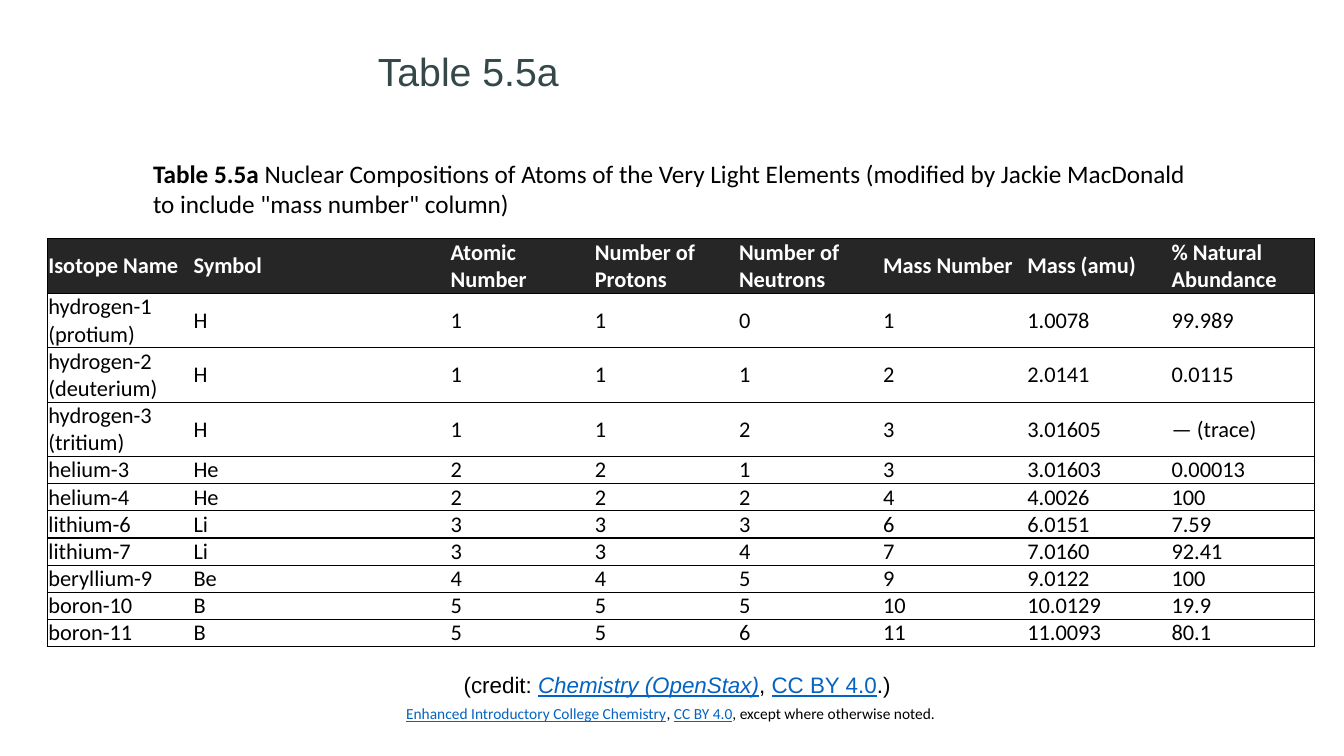
import pptx
import pptx.dml.color
import pptx.enum.text
import pptx.oxml.ns
import pptx.util
from lxml import etree

Inches = pptx.util.Inches
Pt = pptx.util.Pt
RGBColor = pptx.dml.color.RGBColor
ANCHOR = pptx.enum.text.MSO_ANCHOR

BLACK = RGBColor(0x00, 0x00, 0x00)
WHITE = RGBColor(0xFF, 0xFF, 0xFF)
HEADER = RGBColor(0x26, 0x26, 0x26)
TITLE = RGBColor(0x35, 0x48, 0x49)
LINK = RGBColor(0x05, 0x63, 0xC1)

COLUMN_WIDTHS = [1.44, 2.55] + [1.43] * 6
TALL_ROW, SHORT_ROW = 0.54, 0.27
TALL_ROWS = 4  # the header and the three hydrogen isotopes wrap

ISOTOPES = [
    ("Isotope Name", "Symbol", "Atomic Number", "Number of Protons",
     "Number of Neutrons", "Mass Number", "Mass (amu)", "% Natural Abundance"),
    ("hydrogen-1 (protium)", "H", "1", "1", "0", "1", "1.0078", "99.989"),
    ("hydrogen-2 (deuterium)", "H", "1", "1", "1", "2", "2.0141", "0.0115"),
    ("hydrogen-3 (tritium)", "H", "1", "1", "2", "3", "3.01605", "— (trace)"),
    ("helium-3", "He", "2", "2", "1", "3", "3.01603", "0.00013"),
    ("helium-4", "He", "2", "2", "2", "4", "4.0026", "100"),
    ("lithium-6", "Li", "3", "3", "3", "6", "6.0151", "7.59"),
    ("lithium-7", "Li", "3", "3", "4", "7", "7.0160", "92.41"),
    ("beryllium-9", "Be", "4", "4", "5", "9", "9.0122", "100"),
    ("boron-10", "B", "5", "5", "5", "10", "10.0129", "19.9"),
    ("boron-11", "B", "5", "5", "6", "11", "11.0093", "80.1"),
]


def add_span(para, text, size=16, font="Calibri", color=BLACK,
             bold=False, italic=False, underline=False):
    span = para.add_run()
    span.text = text
    span.font.size = Pt(size)
    span.font.name = font
    span.font.color.rgb = color
    span.font.bold = bold
    span.font.italic = italic
    span.font.underline = underline


def add_text(page, left, top, width, height, spans, wrap=True,
             anchor=ANCHOR.TOP, line_spacing=None, **style):
    """Place one paragraph; spans are (text, format) pairs sharing a style."""
    box = page.shapes.add_textbox(
        Inches(left), Inches(top), Inches(width), Inches(height))
    frame = box.text_frame
    frame.word_wrap = wrap
    frame.vertical_anchor = anchor
    para = frame.paragraphs[0]
    para.line_spacing = line_spacing
    for text, changes in spans:
        add_span(para, text, **{**style, **changes})


def set_borders(cell, sides):
    """Draw a 1 pt black line on the given sides and none on the others."""
    properties = cell._tc.get_or_add_tcPr()
    qn = pptx.oxml.ns.qn
    for side in "LRTB":
        line = etree.SubElement(properties, qn("a:ln" + side), w=str(Pt(1)))
        if side in sides:
            fill = etree.SubElement(line, qn("a:solidFill"))
            etree.SubElement(fill, qn("a:srgbClr"), val=str(BLACK))
        else:
            etree.SubElement(line, qn("a:noFill"))


def add_isotope_table(page, left, top):
    heights = [TALL_ROW if row < TALL_ROWS else SHORT_ROW
               for row in range(len(ISOTOPES))]
    table = page.shapes.add_table(
        len(ISOTOPES), len(COLUMN_WIDTHS), Inches(left), Inches(top),
        Inches(sum(COLUMN_WIDTHS)), Inches(sum(heights))).table
    table.horz_banding = False
    for column, width in zip(table.columns, COLUMN_WIDTHS):
        column.width = Inches(width)
    last = len(COLUMN_WIDTHS) - 1
    for row, values in enumerate(ISOTOPES):
        table.rows[row].height = Inches(heights[row])
        is_header = row == 0
        for column, value in enumerate(values):
            cell = table.cell(row, column)
            set_borders(cell, "TB" + {0: "L", last: "R"}.get(column, ""))
            cell.fill.solid()
            cell.fill.fore_color.rgb = HEADER if is_header else WHITE
            cell.vertical_anchor = ANCHOR.MIDDLE
            cell.margin_left = cell.margin_right = Inches(0.01)
            cell.margin_top = cell.margin_bottom = 0
            add_span(cell.text_frame.paragraphs[0], value, bold=is_header,
                     color=WHITE if is_header else BLACK)


def build_table_slide(deck):
    page = deck.slides.add_slide(deck.slide_layouts[6])
    link = {"color": LINK, "underline": True}

    # Footer
    add_text(page, 3.93, 6.94, 7.07, 0.4, [
        ("Enhanced Introductory College Chemistry", link), (", ", {}),
        ("CC BY 4.0", link), (", except where otherwise noted.", {}),
    ], size=11)

    # Title and caption
    add_text(page, 3.65, 0.29, 4.3, 0.7, [("Table 5.5a", {})],
             anchor=ANCHOR.BOTTOM, line_spacing=0.9,
             size=28, font="Arial", color=TITLE)
    add_text(page, 1.42, 1.52, 10.63, 0.71, [
        ("Table 5.5a ", {"bold": True}),
        ("Nuclear Compositions of Atoms of the Very Light Elements (modified "
         "by Jackie MacDonald to include \"mass number\" column)", {}),
    ], size=18)

    # Isotopes
    add_isotope_table(page, 0.47, 2.37)

    # Credit
    add_text(page, 4.5, 6.61, 4.49, 0.37, [
        ("(credit: ", {}), ("Chemistry (OpenStax)", {**link, "italic": True}),
        (", ", {}), ("CC BY 4.0", link), (".)", {}),
    ], wrap=False, size=16, font="Arial")


def main():
    deck = pptx.Presentation()
    deck.slide_width = Inches(13.33)
    deck.slide_height = Inches(7.5)
    build_table_slide(deck)
    deck.save("out.pptx")


if __name__ == "__main__":
    main()
